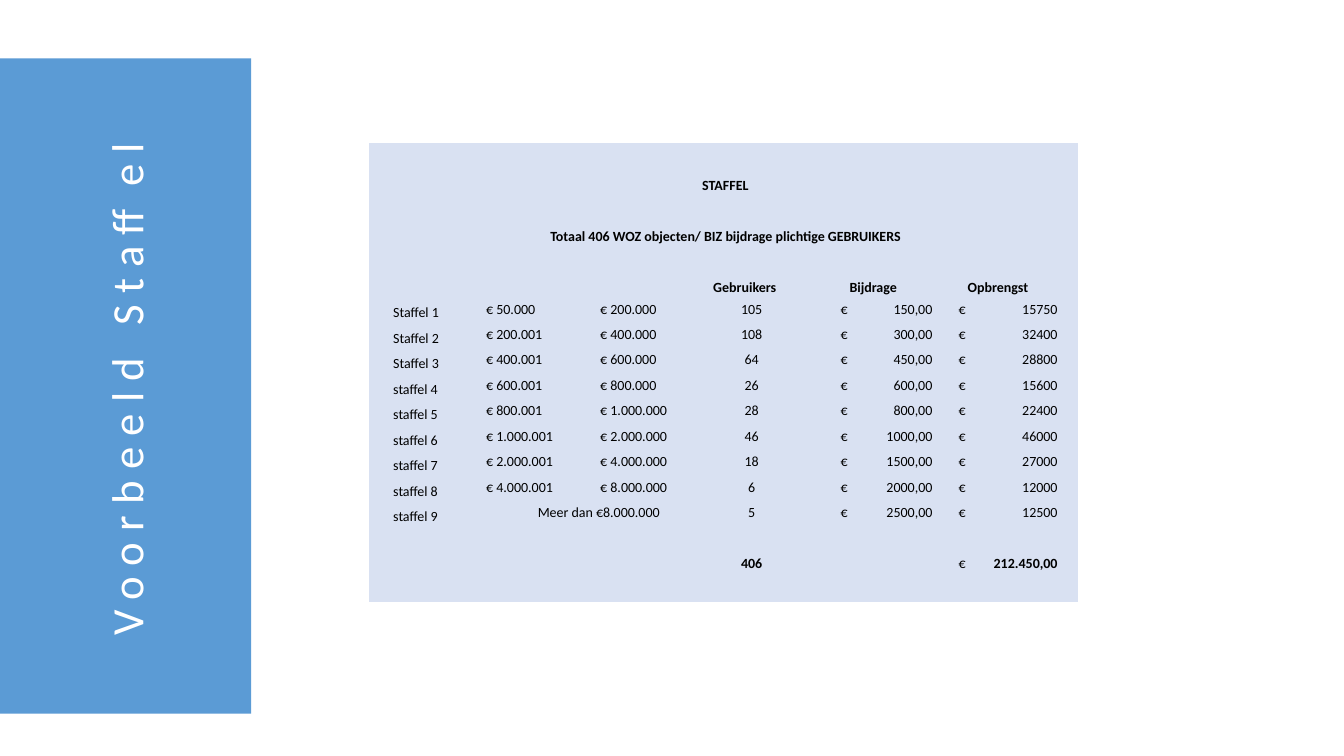
from dataclasses import dataclass

from lxml import etree
from pptx import Presentation
from pptx import util as u
from pptx.dml.color import RGBColor
from pptx.enum import shapes, text
from pptx.oxml.ns import qn


@dataclass(frozen=True)
class Theme:
    font: str = "Calibri"
    banner: RGBColor = RGBColor(0x5B, 0x9B, 0xD5)
    banner_text: RGBColor = RGBColor(0xFF, 0xFF, 0xFF)
    table: RGBColor = RGBColor(0xD9, 0xE1, 0xF2)
    table_text: RGBColor = RGBColor(0, 0, 0)
    title_size: int = 32
    table_size: int = 10
    title_tracking: int = 8
    plain_table: str = "{2D5ABB26-0587-4C30-8999-92F81FD0307C}"


THEME = Theme()
WIDTH, HEIGHT = 13.33, 7.5
BANNER_BOX = (0, 0.58, 2.49, 6.5)
TABLE_BOX = (3.66, 1.42, 7.03, 4.55)
COLUMN_WIDTHS = (0.23, 0.92, 1.13, 1.12, 0.78, 0.57, 0.84, 0.33, 0.91, 0.19)
ROW_COUNT = 18
LABEL, LOWER, UPPER, USERS, FEE_SIGN, FEE, INCOME_SIGN, INCOME = range(1, 9)
HEADER_ROW, FIRST_BRACKET_ROW, TOTAL_ROW = 5, 6, 16

LOWEST_VALUE = 50_000
BRACKETS = (
    (200_000, 105, 150),
    (400_000, 108, 300),
    (600_000, 64, 450),
    (800_000, 26, 600),
    (1_000_000, 28, 800),
    (2_000_000, 46, 1000),
    (4_000_000, 18, 1500),
    (8_000_000, 6, 2000),
    (None, 5, 2500),
)

ALIGN = text.PP_ALIGN
ANCHOR = text.MSO_ANCHOR


def thousands(number):
    return f"{number:,}".replace(",", ".")


def write(frame, wording, *, size, color, align=ALIGN.LEFT, bold=False, tracking=0):
    paragraph = frame.paragraphs[0]
    paragraph.alignment = align
    run = paragraph.add_run()
    run.text = wording
    font = run.font
    font.name, font.size, font.bold = THEME.font, u.Pt(size), bold
    font.color.rgb = color
    if tracking:
        run._r.get_or_add_rPr().set("spc", str(tracking * 100))


def write_cell(cell, wording, align=ALIGN.LEFT, bold=False, anchor=ANCHOR.MIDDLE):
    cell.vertical_anchor = anchor
    cell.text_frame.paragraphs[0]._p.remove(cell.text_frame.paragraphs[0]._p[-1])
    write(cell.text_frame, wording, size=THEME.table_size,
          color=THEME.table_text, align=align, bold=bold)


def add_banner(slide, box, wording):
    left, top, width, height = box
    banner = slide.shapes.add_shape(
        shapes.MSO_SHAPE.RECTANGLE, *(u.Inches(length) for length in box))
    banner.shadow.inherit = False
    banner.fill.solid()
    banner.fill.fore_color.rgb = THEME.banner
    banner.line.fill.background()

    title = slide.shapes.title
    title_width, title_height = 6.14, 0.64
    title.left = u.Inches(left + width / 2 - title_width / 2)
    title.top = u.Inches(top + 0.505 * height - title_height / 2)
    title.width, title.height = u.Inches(title_width), u.Inches(title_height)
    title.rotation = 270
    title.text_frame.word_wrap = True
    title.text_frame.auto_size = text.MSO_AUTO_SIZE.SHAPE_TO_FIT_TEXT
    title.text_frame.vertical_anchor = ANCHOR.MIDDLE
    write(title.text_frame, wording, size=THEME.title_size, color=THEME.banner_text,
          align=ALIGN.CENTER, tracking=THEME.title_tracking)
    banner._element.addnext(title._element)


def prepare_cell(cell):
    cell.fill.solid()
    cell.fill.fore_color.rgb = THEME.table
    cell.margin_left = cell.margin_right = cell.margin_top = u.Inches(0.01)
    cell.margin_bottom = 0
    end = etree.SubElement(cell.text_frame.paragraphs[0]._p, qn("a:endParaRPr"))
    end.set("sz", str(THEME.table_size * 100))


def fill_heading(table):
    for row, wording in ((1, "STAFFEL"),
                         (3, "Totaal 406 WOZ objecten/ BIZ bijdrage plichtige GEBRUIKERS")):
        table.cell(row, LABEL).merge(table.cell(row, INCOME))
        write_cell(table.cell(row, LABEL), wording, ALIGN.CENTER, True, ANCHOR.BOTTOM)
    table.cell(HEADER_ROW, USERS).merge(table.cell(HEADER_ROW, FEE_SIGN))
    for column, wording in ((USERS, "Gebruikers"), (FEE, "Bijdrage"), (INCOME, "Opbrengst")):
        write_cell(table.cell(HEADER_ROW, column), wording, bold=True, anchor=ANCHOR.BOTTOM)


def fill_brackets(table):
    lower = LOWEST_VALUE
    for index, (upper, users, fee) in enumerate(BRACKETS):
        row = FIRST_BRACKET_ROW + index
        label = "Staffel" if index < 3 else "staffel"
        write_cell(table.cell(row, LABEL), f"{label} {index + 1}", anchor=ANCHOR.BOTTOM)
        if upper:
            write_cell(table.cell(row, LOWER), f"€ {thousands(lower)}")
            write_cell(table.cell(row, UPPER), f"€ {thousands(upper)}")
            lower = upper + 1
        else:
            table.cell(row, LOWER).merge(table.cell(row, UPPER))
            write_cell(table.cell(row, LOWER), f"Meer dan €{thousands(lower - 1)}", ALIGN.CENTER)
        write_cell(table.cell(row, USERS), str(users), ALIGN.CENTER)
        for column, wording in ((FEE_SIGN, "€"), (FEE, f"{fee},00"),
                                (INCOME_SIGN, "€"), (INCOME, str(users * fee))):
            write_cell(table.cell(row, column), wording, ALIGN.RIGHT)


def fill_totals(table):
    users = sum(bracket[1] for bracket in BRACKETS)
    income = sum(bracket[1] * bracket[2] for bracket in BRACKETS)
    write_cell(table.cell(TOTAL_ROW, USERS), str(users), ALIGN.CENTER, True)
    write_cell(table.cell(TOTAL_ROW, INCOME_SIGN), "€", ALIGN.RIGHT)
    write_cell(table.cell(TOTAL_ROW, INCOME), f"{thousands(income)},00", ALIGN.RIGHT, True)


def add_bracket_table(slide, box):
    left, top, width, height = (u.Inches(length) for length in box)
    table = slide.shapes.add_table(
        ROW_COUNT, len(COLUMN_WIDTHS), left, top, width, height).table
    table.first_row = table.horz_banding = False
    table._tbl.tblPr.find(qn("a:tableStyleId")).text = THEME.plain_table
    for column, share in zip(table.columns, COLUMN_WIDTHS):
        column.width = int(width * share / sum(COLUMN_WIDTHS))
    for row in table.rows:
        row.height = height // ROW_COUNT
    for cell in table.iter_cells():
        prepare_cell(cell)
    fill_heading(table)
    fill_brackets(table)
    fill_totals(table)


def main():
    presentation = Presentation()
    presentation.slide_width, presentation.slide_height = u.Inches(WIDTH), u.Inches(HEIGHT)
    slide = presentation.slides.add_slide(presentation.slide_layouts[5])
    add_banner(slide, BANNER_BOX, "Voorbeeld Staffel")
    add_bracket_table(slide, TABLE_BOX)
    presentation.save("out.pptx")


if __name__ == "__main__":
    main()
